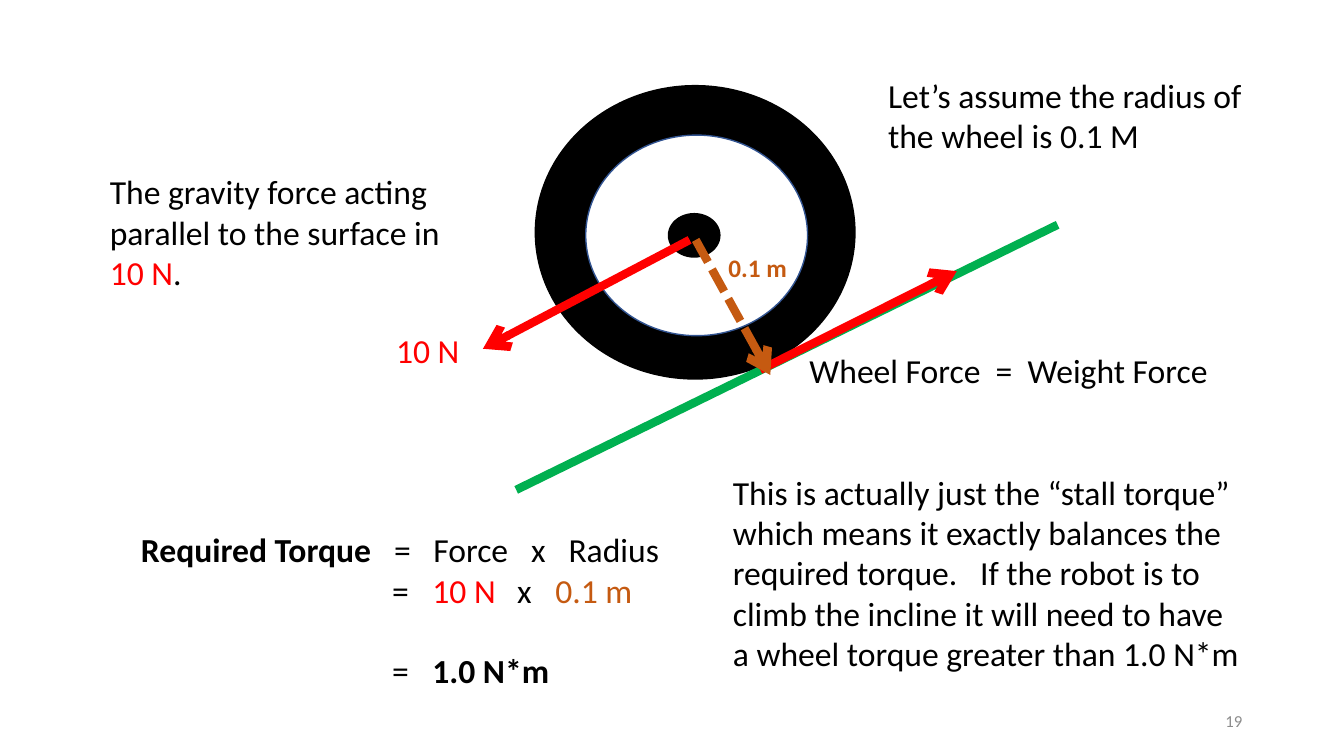
from lxml import etree
from pptx import Presentation
from pptx.dml.color import RGBColor
from pptx.enum.dml import MSO_LINE
from pptx.enum.shapes import MSO_CONNECTOR, MSO_SHAPE
from pptx.enum.text import MSO_ANCHOR, PP_ALIGN
from pptx.oxml.ns import qn
from pptx.util import Inches, Pt

OVAL, LINE = MSO_SHAPE.OVAL, MSO_CONNECTOR.STRAIGHT
DOTS = MSO_LINE.SQUARE_DOT
LEFT, CENTER, RIGHT = PP_ALIGN.LEFT, PP_ALIGN.CENTER, PP_ALIGN.RIGHT
TOP, MIDDLE = MSO_ANCHOR.TOP, MSO_ANCHOR.MIDDLE
BLACK, WHITE, RED, BROWN = "000000", "FFFFFF", "FF0000", "C55A11"
GREEN, BLUE, GRAY = "00B050", "325491", "8C8C8C"

deck = Presentation()
deck.slide_width, deck.slide_height = Inches(13.33), Inches(7.5)
slide = deck.slides.add_slide(deck.slide_layouts[6])
shapes = slide.shapes


def color(code):
    return RGBColor.from_string(code)


def write(box, lines, size=24, align=LEFT, anchor=TOP):
    """Add a text box; each line is a list of (text, color, bold) runs."""
    frame = shapes.add_textbox(*map(Inches, box)).text_frame
    frame.word_wrap = True
    frame.vertical_anchor = anchor
    for i, line in enumerate(lines):
        para = frame.paragraphs[0] if i == 0 else frame.add_paragraph()
        para.alignment = align
        for text, code, bold in line:
            run = para.add_run()
            run.text = text
            font = run.font
            font.name, font.size, font.bold = "Calibri", Pt(size), bold
            font.color.rgb = color(code)
    return frame


# Wheel: tire, rim and hub
for box, fill, edge in [
    ((5.31, 0.85, 3.17, 2.91), BLACK, BLACK),
    ((5.81, 1.34, 2.2, 1.99), WHITE, BLUE),
    ((6.63, 2.12, 0.51, 0.43), BLACK, BLACK),
]:
    disc = shapes.add_shape(OVAL, *map(Inches, box))
    disc.shadow.inherit = False
    disc.fill.solid()
    disc.fill.fore_color.rgb = color(fill)
    disc.line.color.rgb = color(edge)
    disc.line.width = Pt(1)

# Incline, weight force, wheel force and radius
for ends, code, arrow, dash in [
    ((5.12, 4.86, 10.49, 2.23), GREEN, False, None),
    ((6.84, 2.38, 4.79, 3.46), RED, True, None),
    ((7.54, 3.67, 9.49, 2.69), RED, True, None),
    ((6.9, 2.38, 7.64, 3.72), BROWN, True, DOTS),
]:
    link = shapes.add_connector(LINE, *map(Inches, ends))
    link.line.color.rgb = color(code)
    link.line.width = Pt(6)
    if dash:
        link.line.dash_style = dash
    props = link._element.spPr
    if arrow:
        etree.SubElement(props.find(qn("a:ln")), qn("a:tailEnd"), type="arrow")
    etree.SubElement(props, qn("a:effectLst"))

# Labels and notes
write((7.93, 3.42, 4.32, 0.5), [[("Wheel Force  =  Weight Force", BLACK, False)]])
write((3.83, 3.22, 1.07, 0.5), [[("10 N", RED, False)]])
write((0.99, 1.65, 3.81, 1.31), [[
    ("The gravity force acting parallel to the surface in ", BLACK, False),
    ("10 N", RED, False),
    (".", BLACK, False),
]])
write((6.97, 2.44, 1.09, 0.43), [[("0.1 m", BROWN, True)]],
      size=18, align=CENTER, anchor=MIDDLE)
write((8.71, 0.69, 3.81, 0.91),
      [[("Let’s assume the radius of the wheel is 0.1 M", BLACK, False)]])
write((7.17, 4.63, 5.28, 2.12), [[(
    "This is actually just the “stall torque” which means it exactly "
    "balances the required torque.   If the robot is to climb the incline "
    "it will need to have a wheel torque greater than 1.0 N*m", BLACK, False)]])
write((9.42, 6.95, 3, 0.4), [[("19", GRAY, False)]],
      size=12, align=RIGHT, anchor=MIDDLE)

# Torque sum, set on tab stops
torque = write((1.3, 5.2, 5.48, 1.71), [
    [("Required Torque", BLACK, True), ("\t=\tForce\tx\tRadius", BLACK, False)],
    [("\t=\t", BLACK, False), ("10 N", RED, False),
     ("\tx\t", BLACK, False), ("0.1 m", BROWN, False)],
    [("\t=\t", BLACK, False), ("1.0 N*m", BLACK, True)],
])
stops = [(2.51, 2.9, 3.87, 4.24), (2.49, 2.89, 3.73, 4.11), (2.49, 2.89)]
for para, row in zip(torque.paragraphs, stops):
    tabs = etree.SubElement(para._p.get_or_add_pPr(), qn("a:tabLst"))
    for stop in row:
        etree.SubElement(tabs, qn("a:tab"), pos=str(Inches(stop)), algn="l")
torque.paragraphs[2].space_before = Pt(29)

deck.save("out.pptx")
